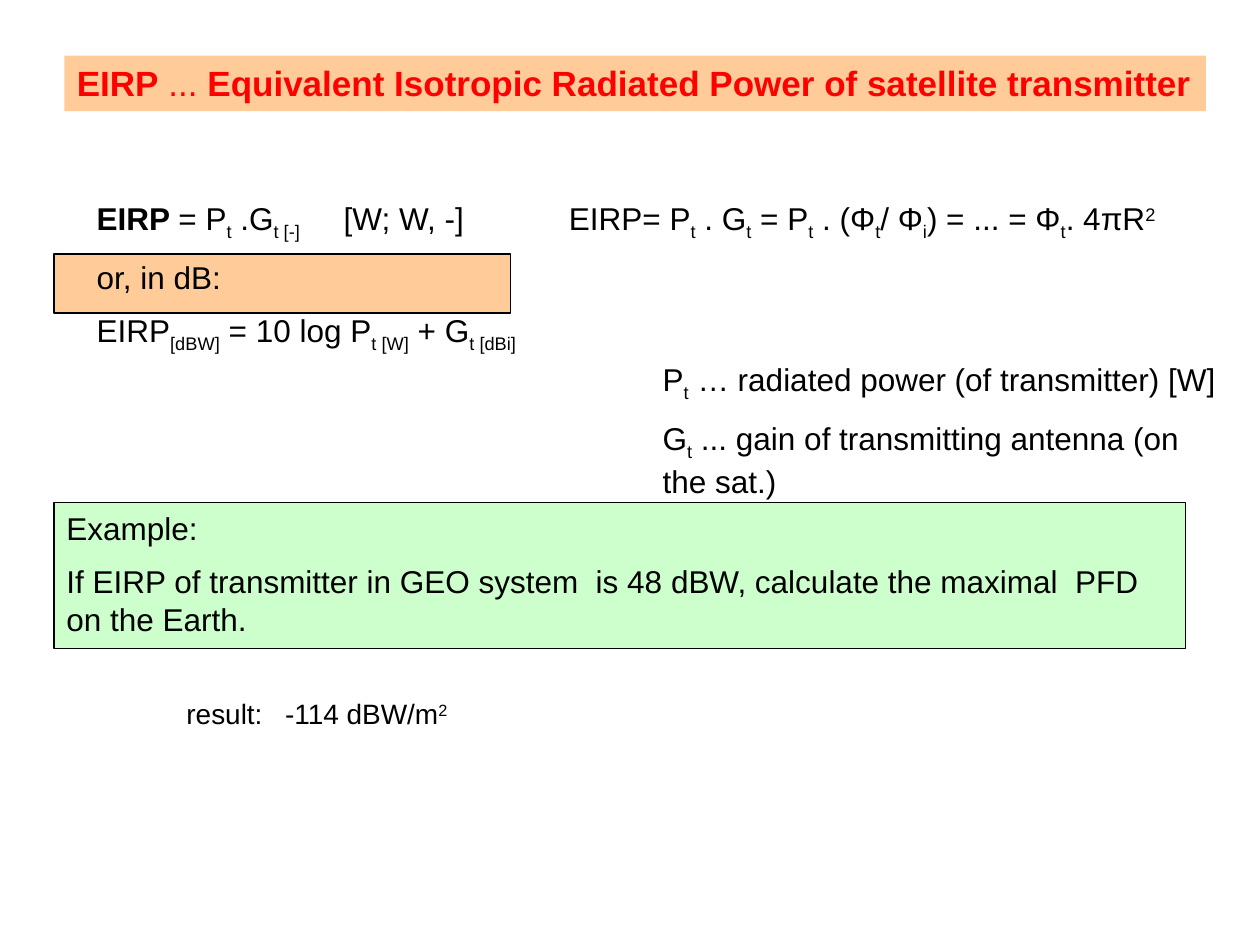
from lxml import etree
from pptx import Presentation
from pptx.dml.color import RGBColor
from pptx.enum.shapes import MSO_SHAPE
from pptx.enum.text import MSO_ANCHOR, PP_ALIGN
from pptx.oxml.ns import qn
from pptx.util import Cm, Pt

RECT = MSO_SHAPE.RECTANGLE
TOP = MSO_ANCHOR.TOP
LEFT = PP_ALIGN.LEFT
SUB, SUP, BOLD = "sub", "sup", "bold"
BASELINES = {SUB: "-25000", SUP: "30000"}
P_T = ["P", ("t", SUB)]
G_T = ["G", ("t", SUB)]
PHI_T = ["Φ", ("t", SUB)]


def rgb(value):
    """Turn a hex string into a colour."""
    return RGBColor.from_string(value)


def add_rect(s, left, top, width, height, fill, line=None):
    """Add a filled rectangle with an optional thin outline."""
    sp = s.shapes.add_shape(RECT, Cm(left), Cm(top), Cm(width), Cm(height))
    sp.shadow.inherit = False
    sp.fill.solid()
    sp.fill.fore_color.rgb = rgb(fill)
    if line:
        sp.line.color.rgb = rgb(line)
        sp.line.width = Pt(0.75)
    else:
        sp.line.fill.background()
    return sp


def add_box(s, left, top, width, height):
    """Add an empty text box."""
    return s.shapes.add_textbox(Cm(left), Cm(top), Cm(width), Cm(height))


def set_tabs(p, stops):
    """Give a paragraph left tab stops in centimetres."""
    tabs = etree.SubElement(p._p.get_or_add_pPr(), qn("a:tabLst"))
    for stop in stops:
        etree.SubElement(tabs, qn("a:tab"), pos=str(int(Cm(stop))), algn="l")


def write(sp, paragraphs, size=18, color="000000", wrap=True, tabs=()):
    """Write paragraphs of plain strings and (text, style) pairs."""
    tf = sp.text_frame
    tf.word_wrap = wrap
    tf.vertical_anchor = TOP
    for i, runs in enumerate(paragraphs):
        p = tf.add_paragraph() if i else tf.paragraphs[0]
        p.alignment = LEFT
        p.space_before = Pt(size / 2)
        if any("\t" in run for run in runs):
            set_tabs(p, tabs)
        for run in runs:
            text, style = (run, None) if isinstance(run, str) else run
            r = p.add_run()
            r.text = text
            r.font.name = "Arial"
            r.font.size = Pt(size)
            r.font.bold = style == BOLD
            r.font.color.rgb = rgb(color)
            if style in BASELINES:
                r._r.get_or_add_rPr().set("baseline", BASELINES[style])


def add_formulas(s):
    """Add the EIRP formulas over their orange highlight."""
    add_rect(s, 1.09, 5.12, 9.2, 1.19, "FFCC99", "000000")
    linear = [("EIRP ", BOLD), "= ", *P_T, " .G", ("t [-]", SUB),
              "\t", "[W; W, -]", "\t", "EIRP= ", *P_T, " . ", *G_T,
              " = ", *P_T, " . (", *PHI_T, "/ Φ", ("i", SUB),
              ") = ... = ", *PHI_T, ". 4πR", ("2", SUP)]
    decibel = ["EIRP", ("[dBW]", SUB), " = 10 log P", ("t [W]", SUB),
               " + G", ("t [dBi]", SUB)]
    write(add_box(s, 1.7, 3.89, 23.29, 4.65),
          [linear, ["or, in dB:"], decibel], tabs=(4.98, 9.52))


def main():
    """Build the slide and save it."""
    prs = Presentation()
    prs.slide_width, prs.slide_height = Cm(25.4), Cm(19.05)
    s = prs.slides.add_slide(prs.slide_layouts[6])

    add_formulas(s)
    write(add_rect(s, 1.09, 10.13, 22.81, 2.95, "CCFFCC", "000000"),
          [["Example:"],
           ["If EIRP of transmitter in GEO system  is 48 dBW, "
            "calculate the maximal  PFD on the Earth."]])
    write(add_box(s, 13.11, 7.14, 11.89, 2.95),
          [[*P_T, " … radiated power (of transmitter) [W]"],
           [*G_T, " ... gain of transmitting antenna (on the sat.)"]])
    write(add_rect(s, 1.3, 1.12, 23.01, 1.12, "FFCC99"),
          [[("EIRP", BOLD), " ... ",
            ("Equivalent Isotropic Radiated Power of satellite transmitter",
             BOLD)]],
          size=20, color="FF0000", wrap=False)
    write(add_box(s, 3.51, 13.92, 15.39, 0.94),
          [["result:", "\t", "-114 dBW/m", ("2", SUP)]], size=16, tabs=(1.99,))

    prs.save("out.pptx")


if __name__ == "__main__":
    main()
